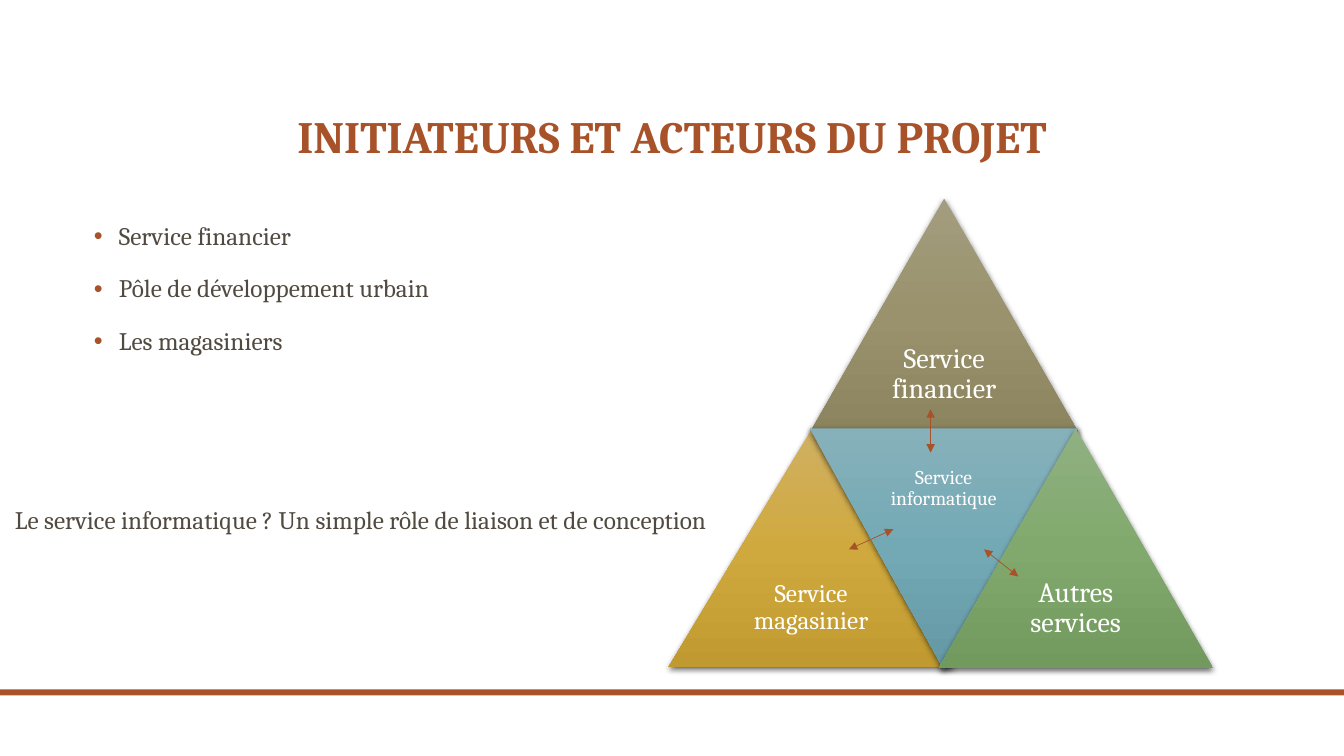
from dataclasses import dataclass

from lxml.etree import SubElement
from pptx import Presentation
from pptx.dml.color import RGBColor
from pptx.enum.shapes import MSO_CONNECTOR, MSO_SHAPE
from pptx.enum.text import MSO_ANCHOR, MSO_AUTO_SIZE, PP_ALIGN
from pptx.oxml import parse_xml
from pptx.oxml.ns import nsdecls, qn
from pptx.util import Inches, Pt


@dataclass(frozen=True)
class Theme:
    font: str = "Cambria"
    accent: str = "A85229"
    text: str = "514A40"
    light: str = "FFFFFF"
    shadow: str = "000000"
    olive: tuple = ("A39D7F", "9A926C", "8B845E")
    gold: tuple = ("D0B062", "D0A93E", "C09A30")
    blue: tuple = ("86B1BB", "73A9B5", "6398A4")
    green: tuple = ("90B081", "81A96D", "72995E")
    title_size: int = 32
    large: int = 20
    body: int = 18
    small: int = 14


THEME = Theme()


def inches(*lengths):
    return [Inches(length) for length in lengths]


def place(holder, box):
    holder.left, holder.top, holder.width, holder.height = inches(*box)


def write(frame, text, size=THEME.body, color=THEME.text, bold=False,
          align=PP_ALIGN.LEFT, anchor=MSO_ANCHOR.TOP, spacing=0.9,
          before=0, bullet=False, inset=None):
    frame.word_wrap = True
    frame.auto_size = MSO_AUTO_SIZE.NONE
    frame.vertical_anchor = anchor
    if inset is not None:
        frame.margin_left = frame.margin_right = Inches(inset)
        frame.margin_top = frame.margin_bottom = Inches(inset)
    frame.text = text
    for index, paragraph in enumerate(frame.paragraphs):
        if bullet:
            add_bullet(paragraph)
        paragraph.alignment = align
        paragraph.line_spacing = spacing
        paragraph.space_before = Pt(before if index else 0)
        for run in paragraph.runs:
            run.font.name = THEME.font
            run.font.size = Pt(size)
            run.font.bold = bold
            run.font.color.rgb = RGBColor.from_string(color)


def add_bullet(paragraph):
    properties = paragraph._p.get_or_add_pPr()
    properties.set("marL", str(Inches(0.3)))
    properties.set("indent", str(Inches(-0.25)))
    bullet_color = SubElement(properties, qn("a:buClr"))
    SubElement(bullet_color, qn("a:srgbClr"), val=THEME.accent)
    SubElement(properties, qn("a:buFont"), typeface="Arial")
    SubElement(properties, qn("a:buChar"), char="•")


def add_title(slide, box):
    title = slide.shapes.title
    place(title, box)
    write(title.text_frame, "INITIATEURS ET ACTEURS DU PROJET",
          size=THEME.title_size, color=THEME.accent, bold=True,
          align=PP_ALIGN.CENTER, anchor=MSO_ANCHOR.BOTTOM)


def add_initiators(slide, box):
    initiators = slide.placeholders[1]
    place(initiators, box)
    services = ["Service financier", "Pôle de développement urbain", "Les magasiniers"]
    write(initiators.text_frame, "\n".join(services), before=18, bullet=True)


def add_remark(slide, box):
    remark = slide.shapes.add_textbox(*inches(*box))
    write(remark.text_frame,
          "Le service informatique ? Un simple rôle de liaison et de conception",
          spacing=1.0)


def add_footer_bar(slide, box):
    bar = slide.shapes.add_shape(MSO_SHAPE.RECTANGLE, *inches(*box))
    bar.shadow.inherit = False
    bar.fill.solid()
    bar.fill.fore_color.rgb = RGBColor.from_string(THEME.accent)
    bar.line.fill.background()


def shade(shape, colors):
    stops = "".join(
        f'<a:gs pos="{index * 50000}"><a:srgbClr val="{color}"/></a:gs>'
        for index, color in enumerate(colors))
    properties = shape._element.spPr
    properties.append(parse_xml(
        f'<a:gradFill {nsdecls("a")} rotWithShape="0"><a:gsLst>{stops}</a:gsLst>'
        '<a:lin ang="5400000" scaled="0"/></a:gradFill>'))
    shape.line.fill.background()
    shape.shadow.inherit = False
    properties.find(qn("a:effectLst")).append(parse_xml(
        f'<a:outerShdw {nsdecls("a")} blurRad="{Pt(4.5)}" dist="{Pt(1.5)}" '
        'dir="5400000" algn="ctr" rotWithShape="0">'
        f'<a:srgbClr val="{THEME.shadow}"><a:alpha val="63000"/></a:srgbClr>'
        '</a:outerShdw>'))


def add_service(slide, box, name, colors, size, inset, inverted=False):
    left, top, width, height = box
    triangle = slide.shapes.add_shape(MSO_SHAPE.ISOSCELES_TRIANGLE, *inches(*box))
    triangle.rotation = 180 if inverted else 0
    shade(triangle, colors)
    label_top = top if inverted else top + height / 2
    label = slide.shapes.add_textbox(
        *inches(left + width / 4, label_top, width / 2, height / 2))
    write(label.text_frame, name, size=size, color=THEME.light,
          align=PP_ALIGN.CENTER, anchor=MSO_ANCHOR.MIDDLE, inset=inset)


def add_exchange(slide, start, end):
    arrow = slide.shapes.add_connector(MSO_CONNECTOR.STRAIGHT, *inches(*start, *end))
    arrow.line.color.rgb = RGBColor.from_string(THEME.accent)
    arrow.line.width = Pt(0.5)
    outline = arrow.line._get_or_add_ln()
    for tip in ("a:headEnd", "a:tailEnd"):
        SubElement(outline, qn(tip), type="triangle")
    SubElement(arrow._element.spPr, qn("a:effectLst"))


def add_pyramid(slide, box):
    left, top, width, height = box
    services = [
        ((1.4, 0, 2.67, 2.33), "Service financier", THEME.olive, THEME.large, 0.08, False),
        ((0, 2.3, 2.83, 2.35), "Service magasinier", THEME.gold, THEME.body, 0.07, False),
        ((1.4, 2.28, 2.66, 2.39), "Service informatique", THEME.blue, THEME.small, 0.06, True),
        ((width - 2.72, 2.28, 2.72, 2.38), "Autres services", THEME.green, THEME.large, 0.08, False),
    ]
    for (x, y, w, h), *details in services:
        add_service(slide, (left + x, top + y, w, h), *details)
    exchanges = [
        ((2.6, 2.09), (2.6, 2.52)),
        ((3.13, 3.48), (3.47, 3.75)),
        ((2.23, 3.28), (1.79, 3.48)),
    ]
    for (x1, y1), (x2, y2) in exchanges:
        add_exchange(slide, (left + x1, top + y1), (left + x2, top + y2))


def main():
    presentation = Presentation()
    presentation.slide_width, presentation.slide_height = inches(13.33, 7.5)
    slide = presentation.slides.add_slide(presentation.slide_layouts[1])
    add_footer_bar(slide, (0, 6.84, 13.33, 0.06))
    add_title(slide, (1.42, 0.42, 10.5, 1.25))
    add_pyramid(slide, (6.63, 1.97, 5.4, 4.67))
    add_initiators(slide, (0.78, 2.17, 5.15, 1.78))
    add_remark(slide, (0.05, 4.95, 7.47, 0.4))
    presentation.save("out.pptx")


if __name__ == "__main__":
    main()
